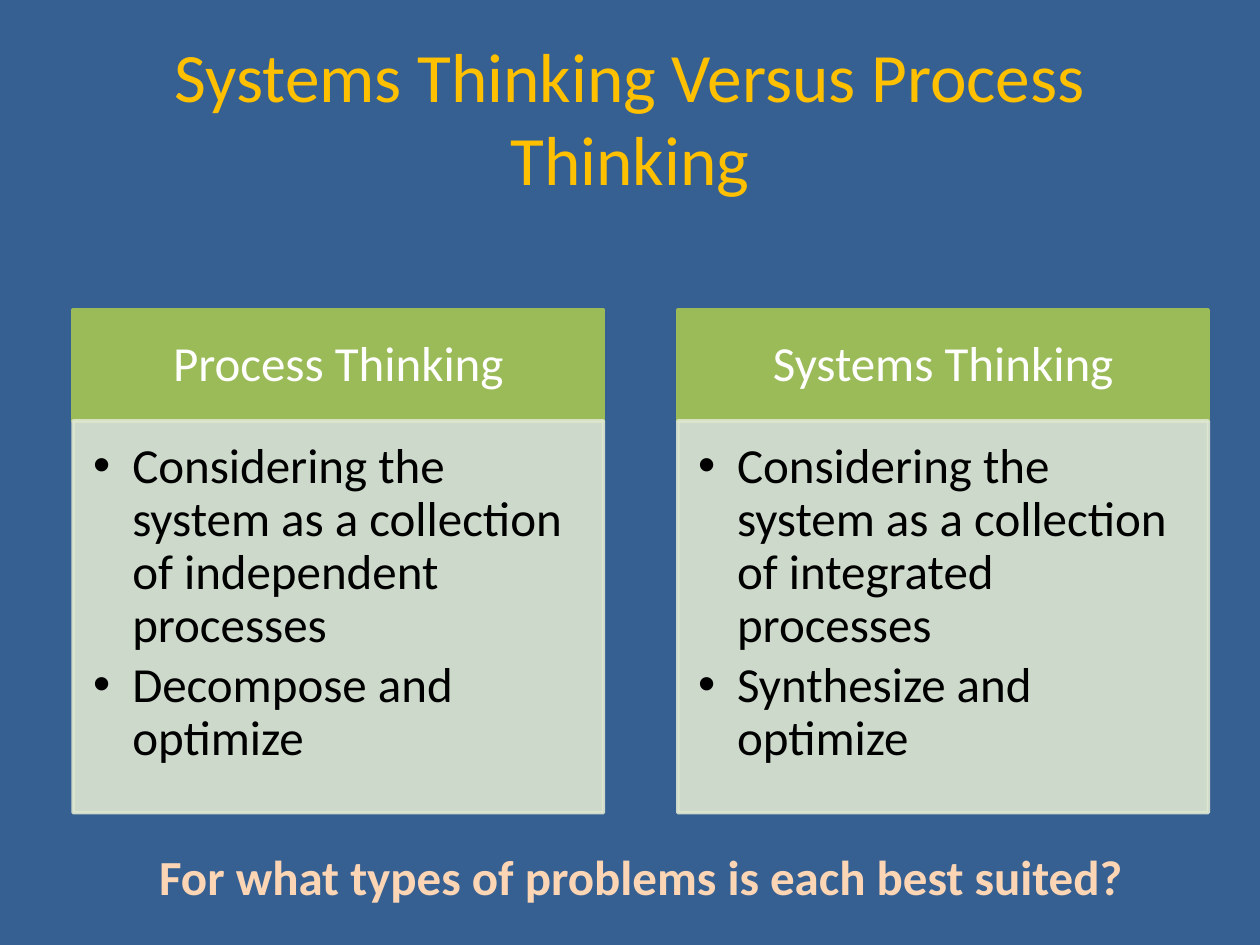
from lxml.etree import SubElement
from pptx import Presentation
from pptx.dml.color import RGBColor
from pptx.enum.shapes import MSO_SHAPE
from pptx.enum.text import MSO_ANCHOR, PP_ALIGN
from pptx.oxml.ns import qn
from pptx.util import Inches, Pt


def color(value):
    return RGBColor.from_string(value)


def write(box, lines, size=28, ink="000000", bold=False, align=PP_ALIGN.CENTER,
          anchor=MSO_ANCHOR.TOP, margins=(0.1, 0.05, 0.1, 0.05),
          spacing=None, after=0, bullet=False):
    frame = box.text_frame
    frame.word_wrap = True
    frame.vertical_anchor = anchor
    (frame.margin_left, frame.margin_top,
     frame.margin_right, frame.margin_bottom) = map(Inches, margins)
    for index, line in enumerate(lines):
        para = frame.add_paragraph() if index else frame.paragraphs[0]
        para.alignment = align
        para.line_spacing = spacing
        para.space_after = Pt(after)
        if bullet:
            para.level = 1
            properties = para._p.get_or_add_pPr()
            properties.set("marL", str(Inches(0.31)))
            properties.set("indent", str(Inches(-0.31)))
            SubElement(properties, qn("a:buFont"), typeface="Arial")
            SubElement(properties, qn("a:buChar"), char="•")
        span = para.add_run()
        span.text = line
        span.font.name = "Calibri"
        span.font.size = Pt(size)
        span.font.bold = bold
        span.font.color.rgb = color(ink)


deck = Presentation()
deck.slide_width = Inches(10)
deck.slide_height = Inches(7.5)
page = deck.slides.add_slide(deck.slide_layouts[6])
page.background.fill.solid()
page.background.fill.fore_color.rgb = color("376092")

title = page.shapes.add_textbox(Inches(0.5), Inches(0.3), Inches(9), Inches(1.25))
write(title, ["Systems Thinking Versus Process Thinking"], size=39.6,
      ink="FFC000", anchor=MSO_ANCHOR.MIDDLE)

columns = [
    ("Process Thinking",
     ["Considering the system as a collection of independent processes",
      "Decompose and optimize"]),
    ("Systems Thinking",
     ["Considering the system as a collection of integrated processes",
      "Synthesize and optimize"]),
]
header_format = dict(ink="FFFFFF", anchor=MSO_ANCHOR.MIDDLE,
                     margins=(0.22, 0.12, 0.22, 0.12), spacing=0.9, after=9.8)
body_format = dict(align=PP_ALIGN.LEFT, margins=(0.16, 0.16, 0.22, 0.24),
                   spacing=0.9, after=4.2, bullet=True)

for column, (heading, points) in enumerate(columns):
    left = 0.58 + column * 4.8
    for top, height, tint, opacity, lines, style in (
        (2.46, 0.88, "9BBB59", 100, [heading], header_format),
        (3.34, 3.11, "DEE7D1", 90, points, body_format),
    ):
        panel = page.shapes.add_shape(MSO_SHAPE.RECTANGLE, Inches(left), Inches(top),
                                      Inches(4.21), Inches(height))
        panel.shadow.inherit = False
        panel.fill.solid()
        panel.fill.fore_color.rgb = color(tint)
        panel.line.color.rgb = color(tint)
        panel.line.width = Pt(2)
        if opacity < 100:
            for paint in panel._element.spPr.iter(qn("a:srgbClr")):
                SubElement(paint, qn("a:alpha"), val=str(opacity * 1000))
        write(panel, lines, **style)

question = page.shapes.add_textbox(Inches(1), Inches(6.67), Inches(8.17), Inches(0.57))
write(question, ["For what types of problems is each best suited?"],
      ink="FCD5B5", bold=True)

deck.save("out.pptx")
